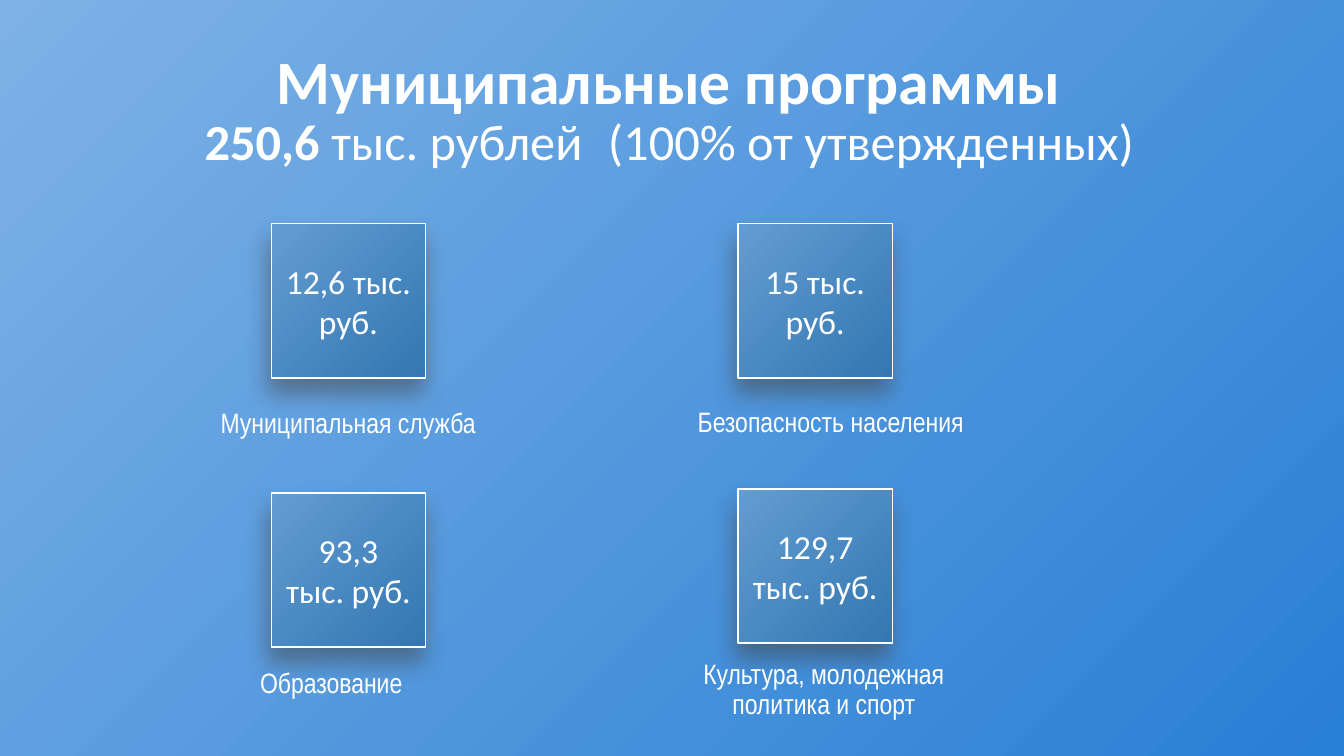
from lxml.etree import SubElement
from pptx import Presentation
from pptx.dml.color import RGBColor
from pptx.enum.shapes import MSO_SHAPE
from pptx.enum.text import MSO_ANCHOR, MSO_AUTO_SIZE, PP_ALIGN
from pptx.oxml.ns import qn
from pptx.util import Inches, Pt

WHITE = RGBColor(0xFF, 0xFF, 0xFF)
SKY = RGBColor(0x7E, 0xB2, 0xE6)
AZURE = RGBColor(0x29, 0x7F, 0xD5)
STEEL = RGBColor(0x62, 0x9D, 0xD1)
DEEP = RGBColor(0x34, 0x77, 0xB2)
SHADE = RGBColor(0x40, 0x40, 0x40)

HEAD = {"name": "Calibri", "size": Pt(36), "bold": False}
SUM = {"name": "Calibri", "size": Pt(24)}
LABEL = {"name": "Arial Narrow", "size": Pt(20)}

# Card columns and side, in percent of the slide
LEFT, RIGHT = 20.18, 54.91
CARD = (11.48, 20.4)

# Sum, card corner, caption, caption box; all lengths in percent
PROGRAMS = [
    ("12,6 тыс. руб.", (LEFT, 29.6), "Муниципальная служба", (15.3, 54.13, 21.23, 8.13)),
    ("15 тыс. руб.", (RIGHT, 29.6), "Безопасность населения", (50.56, 54, 22.51, 8.13)),
    ("93,3\nтыс. руб.", (LEFT, 65.2), "Образование", (12.83, 88.53, 23.63, 4)),
    ("129,7 тыс. руб.", (RIGHT, 64.67), "Культура, молодежная политика и спорт",
     (50.04, 87.33, 22.51, 8.13)),
]


class Board:
    def __init__(self, deck):
        self.wide, self.high = deck.slide_width, deck.slide_height
        self.slide = deck.slides.add_slide(deck.slide_layouts[5])
        self.blend(self.slide.background.fill, AZURE, SKY, 135)

    def place(self, x, y, w, h):
        """Turn percent of the slide into lengths."""
        return [round(part * whole / 100) for part, whole in
                zip((x, y, w, h), (self.wide, self.high) * 2)]

    def blend(self, fill, start, end, angle):
        fill.gradient()
        fill.gradient_angle = angle
        for stop, color in zip(fill.gradient_stops, (start, end)):
            stop.color.rgb = color

    def style(self, run, looks):
        for key, value in looks.items():
            setattr(run.font, key, value)
        run.font.color.rgb = WHITE

    def put(self, frame, text, looks, **form):
        frame.word_wrap = True
        frame.text = text
        for para in frame.paragraphs:
            for key, value in {"alignment": PP_ALIGN.CENTER, **form}.items():
                setattr(para, key, value)
            for run in para.runs:
                self.style(run, looks)

    def title(self, box, name, total, rest):
        shape = self.slide.shapes.title
        shape.left, shape.top, shape.width, shape.height = self.place(*box)
        frame = shape.text_frame
        frame.auto_size = MSO_AUTO_SIZE.SHAPE_TO_FIT_TEXT
        frame.vertical_anchor = MSO_ANCHOR.MIDDLE
        self.put(frame, name, {**HEAD, "size": Pt(44), "bold": True}, line_spacing=0.9)
        para = frame.paragraphs[0]
        para.add_line_break()
        for text, bold in ((total, True), (rest, False)):
            run = para.add_run()
            run.text = text
            self.style(run, {**HEAD, "bold": bold})

    def shadow(self, shape):
        """Add a soft shadow below the shape."""
        effects = SubElement(shape.element.spPr, qn("a:effectLst"))
        outer = SubElement(effects, qn("a:outerShdw"), blurRad=str(Pt(17)),
                           dist=str(Pt(11)), dir=str(101 * 60000), rotWithShape="0")
        color = SubElement(outer, qn("a:srgbClr"), val=str(SHADE))
        SubElement(color, qn("a:alpha"), val="49000")

    def card(self, spot, text):
        shape = self.slide.shapes.add_shape(MSO_SHAPE.RECTANGLE, *self.place(*spot, *CARD))
        self.blend(shape.fill, STEEL, DEEP, 315)
        shape.line.color.rgb = WHITE
        shape.line.width = Pt(1)
        self.shadow(shape)
        shape.text_frame.vertical_anchor = MSO_ANCHOR.MIDDLE
        self.put(shape.text_frame, text, SUM)

    def label(self, box, text):
        frame = self.slide.shapes.add_textbox(*self.place(*box)).text_frame
        for side in ("left", "top", "right", "bottom"):
            setattr(frame, f"margin_{side}", 0)
        frame.auto_size = MSO_AUTO_SIZE.SHAPE_TO_FIT_TEXT
        self.put(frame, text, LABEL, line_spacing=0.9, space_before=Pt(10))


def main():
    deck = Presentation()
    deck.slide_width, deck.slide_height = Inches(13.33), Inches(7.5)
    board = Board(deck)
    board.title((6.68, 6, 86.27, 17.47), "Муниципальные программы",
                "250,6 ", "тыс. рублей\t(100% от утвержденных)")
    for money, spot, name, box in PROGRAMS:
        board.card(spot, money)
        board.label(box, name)
    deck.save("out.pptx")


if __name__ == "__main__":
    main()
